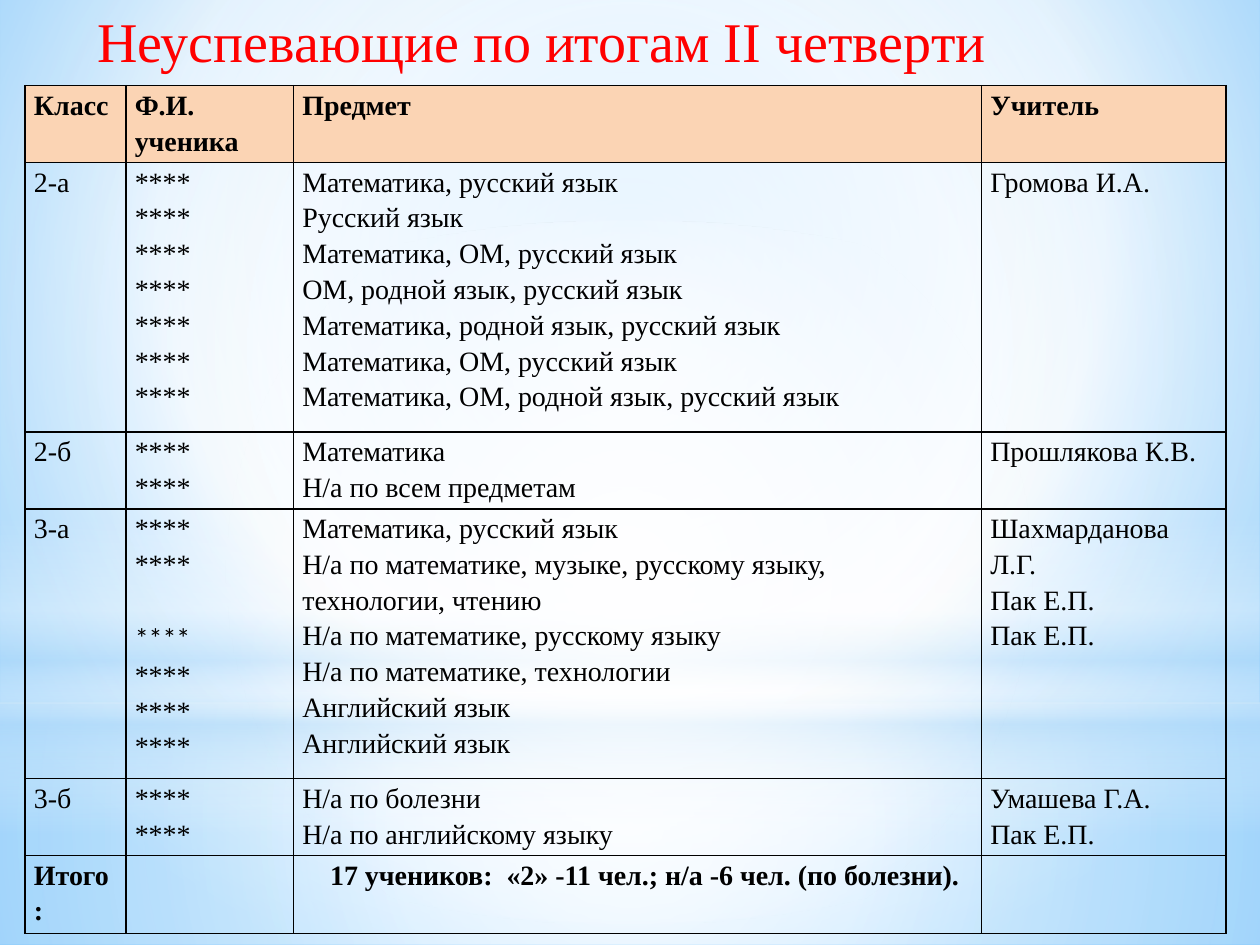
from dataclasses import dataclass

from lxml import etree
from pptx import Presentation
from pptx.dml.color import RGBColor
from pptx.enum.shapes import MSO_SHAPE
from pptx.enum.text import MSO_ANCHOR, PP_ALIGN
from pptx.oxml.ns import qn
from pptx.util import Inches, Pt

RECTANGLE, OVAL = MSO_SHAPE.RECTANGLE, MSO_SHAPE.OVAL
LEFT, MIDDLE = PP_ALIGN.LEFT, MSO_ANCHOR.MIDDLE
CENTER = (50, 50, 50, 50)


@dataclass(frozen=True)
class Theme:
    font: str = "Times New Roman"
    alternate_font: str = "Calibri"
    title_size: int = 32
    table_size: int = 16
    line_spacing: float = 1.15
    title_color: str = "FF0000"
    text_color: str = "000000"
    header_fill: str = "FBD4B4"
    white: str = "FFFFFF"
    pale_blue: str = "B4DCFA"
    sky_blue: str = "9ED5FF"
    deep_blue: str = "5BB9FF"


@dataclass(frozen=True)
class Line:
    """One paragraph of a cell that departs from the plain style."""
    text: str
    font: str = ""
    space_before: float = 0
    indent: float = 0


THEME = Theme()
STARS = "****"
HEADER = [["Класс"], ["Ф.И.", "ученика"], ["Предмет"], ["Учитель"]]
CLASSES = [
    [["2-а"], [STARS] * 7,
     ["Математика, русский язык", "Русский язык", "Математика, ОМ, русский язык",
      "ОМ, родной язык, русский язык", "Математика, родной язык, русский язык",
      "Математика, ОМ, русский язык", "Математика, ОМ, родной язык, русский язык"],
     ["Громова И.А."]],
    [["2-б"], [STARS] * 2, ["Математика", "Н/а по всем предметам"], ["Прошлякова К.В."]],
    [["3-а"],
     [STARS, STARS, Line(STARS, THEME.alternate_font, space_before=20.5)] + [STARS] * 3,
     ["Математика, русский язык",
      "Н/а по математике, музыке, русскому языку, технологии, чтению",
      "Н/а по математике, русскому языку", "Н/а по математике, технологии",
      "Английский язык", "Английский язык"],
     ["Шахмарданова Л.Г.", "Пак Е.П.", "Пак Е.П."]],
    [["3-б"], [STARS] * 2, ["Н/а по болезни", "Н/а по английскому языку"],
     ["Умашева Г.А.", "Пак Е.П."]],
]
TOTAL = [["Итого:"], [],
         [Line("17 учеников:  «2» -11 чел.; н/а -6 чел. (по болезни).", indent=0.22)], []]
COLUMN_WIDTHS = [0.8, 1.33, 5.46, 1.94]
ROW_HEIGHTS = [0.61, 2.14, 0.61, 2.14, 0.61, 0.62]


class SlideBuilder:
    def __init__(self, presentation, theme):
        self.theme = theme
        self.slide = presentation.slides.add_slide(presentation.slide_layouts[5])

    def gradient(self, fill, owner, stops, focus=None, angle=90):
        """Stops are (position, colour, opacity); a focus makes the gradient circular."""
        fill.gradient()
        gradient = next(owner.iter(qn("a:gradFill")))
        for child in list(gradient):
            gradient.remove(child)
        stop_list = etree.SubElement(gradient, qn("a:gsLst"))
        for position, color, opacity in stops:
            stop = etree.SubElement(stop_list, qn("a:gs"), pos=str(position * 1000))
            color_element = etree.SubElement(stop, qn("a:srgbClr"), val=color)
            if opacity < 100:
                etree.SubElement(color_element, qn("a:alpha"), val=str(opacity * 1000))
        if focus:
            route = etree.SubElement(gradient, qn("a:path"), {"path": "circle"})
            sides = {side: str(value * 1000) for side, value in zip("ltrb", focus)}
            etree.SubElement(route, qn("a:fillToRect"), sides)
        else:
            etree.SubElement(gradient, qn("a:lin"), ang=str(angle * 60000), scaled="0")

    def background(self, stops, focus):
        self.gradient(self.slide.background.fill, self.slide.element, stops, focus)

    def glow(self, kind, top, height, stops, focus=None):
        """A full-width translucent band behind the content."""
        shape = self.slide.shapes.add_shape(
            kind, 0, Inches(top), Inches(10), Inches(height))
        shape.shadow.inherit = False
        shape.line.fill.background()
        self.gradient(shape.fill, shape.element, stops, focus)

    def run(self, paragraph, text, size, color, bold=False, font=""):
        run = paragraph.add_run()
        run.text = text
        run.font.name = font or self.theme.font
        run.font.size = Pt(size)
        run.font.bold = bold
        run.font.color.rgb = RGBColor.from_string(color)

    def title(self, text, left, top, width, height):
        title = self.slide.shapes.title
        title.left, title.top = Inches(left), Inches(top)
        title.width, title.height = Inches(width), Inches(height)
        frame = title.text_frame
        frame.word_wrap = False
        frame.vertical_anchor = MIDDLE
        paragraph = frame.paragraphs[0]
        paragraph.alignment = LEFT
        self.run(paragraph, text, self.theme.title_size, self.theme.title_color)
        # The bands were added after the placeholder, so bring it in front of them.
        title.element.getparent().append(title.element)

    def borders(self, cell):
        properties = cell._tc.get_or_add_tcPr()
        for index, side in enumerate(("lnL", "lnR", "lnT", "lnB")):
            line = etree.Element(qn(f"a:{side}"), w=str(Pt(1)))
            fill = etree.SubElement(line, qn("a:solidFill"))
            etree.SubElement(fill, qn("a:srgbClr"), val=self.theme.text_color)
            properties.insert(index, line)

    def cell(self, cell, lines, bold, fill_color):
        cell.margin_left = cell.margin_right = Inches(0.07)
        cell.margin_top = cell.margin_bottom = 0
        if fill_color:
            cell.fill.solid()
            cell.fill.fore_color.rgb = RGBColor.from_string(fill_color)
        else:
            cell.fill.background()
        self.borders(cell)
        for index, item in enumerate(lines):
            line = item if isinstance(item, Line) else Line(item)
            frame = cell.text_frame
            paragraph = frame.add_paragraph() if index else frame.paragraphs[0]
            paragraph.line_spacing = self.theme.line_spacing
            paragraph.space_before = Pt(line.space_before)
            if line.indent:
                cell.margin_left = Inches(0.07 + line.indent)
            self.run(paragraph, line.text, self.theme.table_size,
                     self.theme.text_color, bold, line.font)

    def table(self, rows, left, top, widths, heights):
        """The first row is a filled header; first and last rows are bold."""
        table = self.slide.shapes.add_table(
            len(rows), len(widths), Inches(left), Inches(top),
            Inches(sum(widths)), Inches(sum(heights))).table
        table.first_row = table.horz_banding = False
        for column, width in zip(table.columns, widths):
            column.width = Inches(width)
        for number, (row, height) in enumerate(zip(rows, heights)):
            table.rows[number].height = Inches(height)
            bold = number in (0, len(rows) - 1)
            fill_color = None if number else self.theme.header_fill
            for column, lines in enumerate(row):
                self.cell(table.cell(number, column), lines, bold, fill_color)


def main():
    presentation = Presentation()
    presentation.slide_width, presentation.slide_height = Inches(10), Inches(7.5)
    builder = SlideBuilder(presentation, THEME)
    white, pale = THEME.white, THEME.pale_blue
    builder.background([(0, THEME.sky_blue, 100), (60, white, 100),
                        (100, THEME.deep_blue, 100)], (20, 10, 20, 60))
    builder.glow(RECTANGLE, 5.58, 1.92,
                 [(0, white, 91), (37, white, 76), (100, pale, 79)], CENTER)
    builder.glow(RECTANGLE, 0, 5.58,
                 [(0, white, 89), (48, white, 62), (100, pale, 79)], CENTER)
    builder.glow(RECTANGLE, 4.12, 2.5,
                 [(0, white, 0), (29, white, 30), (45, pale, 40),
                  (55, white, 26), (65, pale, 60), (100, white, 0)])
    builder.glow(OVAL, 1.75, 5.58, [(0, white, 100), (56, white, 0)], CENTER)
    builder.title("Неуспевающие по итогам II четверти", 0.67, 0, 7.33, 0.64)
    builder.table([HEADER, *CLASSES, TOTAL], 0.2, 0.68, COLUMN_WIDTHS, ROW_HEIGHTS)
    presentation.save("out.pptx")


if __name__ == "__main__":
    main()
